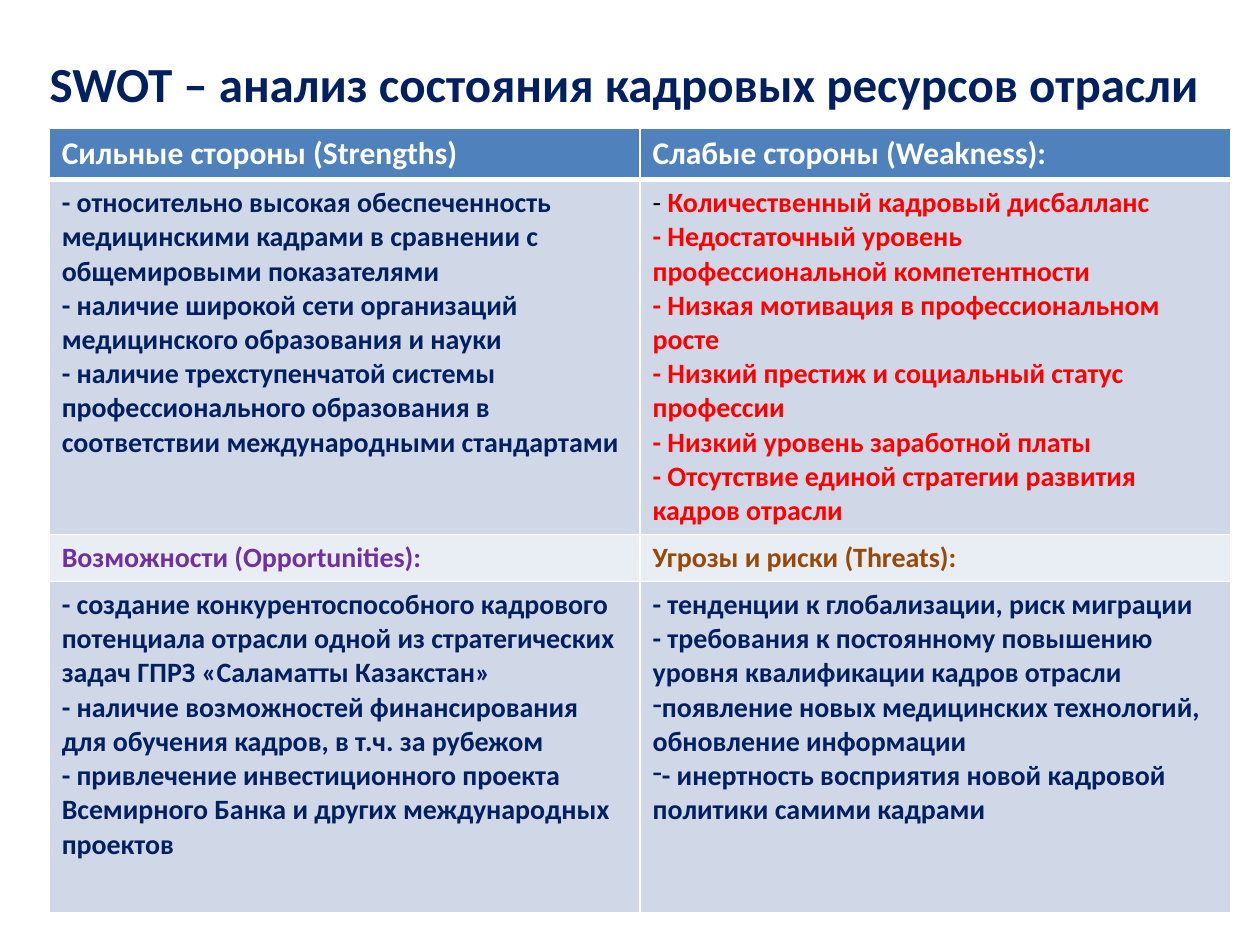
from lxml.etree import SubElement
from pptx import Presentation
from pptx.dml.color import RGBColor
from pptx.enum.text import MSO_ANCHOR, PP_ALIGN
from pptx.oxml.ns import qn
from pptx.util import Pt

PX = 9144
FONT = "Calibri"
COLORS = {
    "navy": "002060", "white": "FFFFFF", "black": "000000", "red": "FF0000",
    "purple": "7030A0", "brown": "984807", "header": "4F81BD",
    "band": "D0D8E8", "light_band": "E9EDF4",
}
STRENGTHS = [
    "- относительно высокая обеспеченность медицинскими кадрами в сравнении с общемировыми показателями",
    "- наличие широкой сети организаций медицинского образования и науки",
    "- наличие трехступенчатой системы профессионального образования в соответствии международными стандартами",
]
WEAKNESSES = [
    "Количественный кадровый дисбалланс",
    "- Недостаточный уровень",
    "профессиональной компетентности",
    "- Низкая мотивация в профессиональном",
    "росте",
    "- Низкий престиж и социальный статус",
    "профессии",
    "- Низкий уровень заработной платы",
    "- Отсутствие единой стратегии развития",
    "кадров отрасли",
]
OPPORTUNITIES = [
    "- создание конкурентоспособного кадрового потенциала отрасли одной из стратегических задач ГПРЗ «Саламатты Казакстан»",
    "- наличие возможностей финансирования для обучения кадров, в т.ч. за рубежом",
    "- привлечение инвестиционного проекта Всемирного Банка и других международных проектов",
]
THREATS = [
    "- тенденции к глобализации, риск миграции",
    "- требования к постоянному повышению уровня квалификации кадров отрасли",
]
BULLETED_THREATS = [
    "появление новых медицинских технологий, обновление информации",
    "- инертность восприятия новой кадровой политики самими кадрами",
]
ROWS = [
    (37, "header", 18, [("white", ["Сильные стороны (Strengths)"]),
                        ("white", ["Слабые стороны (Weakness):"])]),
    (259, "band", 16, [("navy", STRENGTHS), ("red", WEAKNESSES)]),
    (34, "light_band", 16, [("purple", ["Возможности (Opportunities):"]),
                            ("brown", ["Угрозы и риски (Threats):"])]),
    (263, "band", 16, [("navy", OPPORTUNITIES),
                       ("navy", THREATS + BULLETED_THREATS)]),
]


def px(length):
    """Turn whole px into EMU."""
    return length * PX


def rgb(name):
    """Look up a named colour."""
    return RGBColor.from_string(COLORS[name])


def add_span(para, text, size, color, bold=True):
    """Append one formatted run to a paragraph."""
    span = para.add_run()
    span.text = text
    span.font.name = FONT
    span.font.size = Pt(size)
    span.font.bold = bold
    span.font.color.rgb = rgb(color)


def add_dash_bullet(para):
    """Give a paragraph a dash bullet without an indent."""
    properties = para._p.get_or_add_pPr()
    properties.set("marL", "0")
    properties.set("indent", "0")
    SubElement(properties, qn("a:buFontTx"))
    SubElement(properties, qn("a:buChar"), char="-")


def add_borders(cell, top, bottom):
    """Draw white cell borders with the given top and bottom widths."""
    properties = cell._tc.get_or_add_tcPr()
    for side, width in (("L", 1), ("R", 1), ("T", top), ("B", bottom)):
        line = SubElement(properties, qn(f"a:ln{side}"), w=str(Pt(width)))
        fill = SubElement(line, qn("a:solidFill"))
        SubElement(fill, qn("a:srgbClr"), val=COLORS["white"])


def fill_cell(cell, texts, size, color):
    """Write the paragraphs of one table cell."""
    frame = cell.text_frame
    for index, text in enumerate(texts):
        para = frame.add_paragraph() if index else frame.paragraphs[0]
        if text in BULLETED_THREATS:
            add_dash_bullet(para)
        if text == WEAKNESSES[0]:
            add_span(para, "- ", size, "black", bold=False)
        add_span(para, text, size, color)


def set_title(page):
    """Place and format the title."""
    title = page.shapes.title
    title.left, title.top, title.width, title.height = map(px, (23, 30, 953, 72))
    title.text_frame.vertical_anchor = MSO_ANCHOR.MIDDLE
    para = title.text_frame.paragraphs[0]
    para.alignment = PP_ALIGN.CENTER
    add_span(para, "SWOT – анализ состояния кадровых ресурсов отрасли ", 28, "navy")


def add_swot_table(page):
    """Build the two-column SWOT table."""
    height = sum(row[0] for row in ROWS)
    table = page.shapes.add_table(
        len(ROWS), 2, px(39), px(102), px(938), px(height)).table
    for row_index, (row_height, fill, size, cells) in enumerate(ROWS):
        table.rows[row_index].height = px(row_height)
        for column_index, (color, texts) in enumerate(cells):
            cell = table.cell(row_index, column_index)
            add_borders(cell, 3 if row_index == 1 else 1, 3 if row_index == 0 else 1)
            cell.fill.solid()
            cell.fill.fore_color.rgb = rgb(fill)
            fill_cell(cell, texts, size, color)


def main():
    """Create and save the deck."""
    deck = Presentation()
    deck.slide_width, deck.slide_height = px(1000), px(750)
    page = deck.slides.add_slide(deck.slide_layouts[5])
    set_title(page)
    add_swot_table(page)
    deck.save("out.pptx")


if __name__ == "__main__":
    main()
